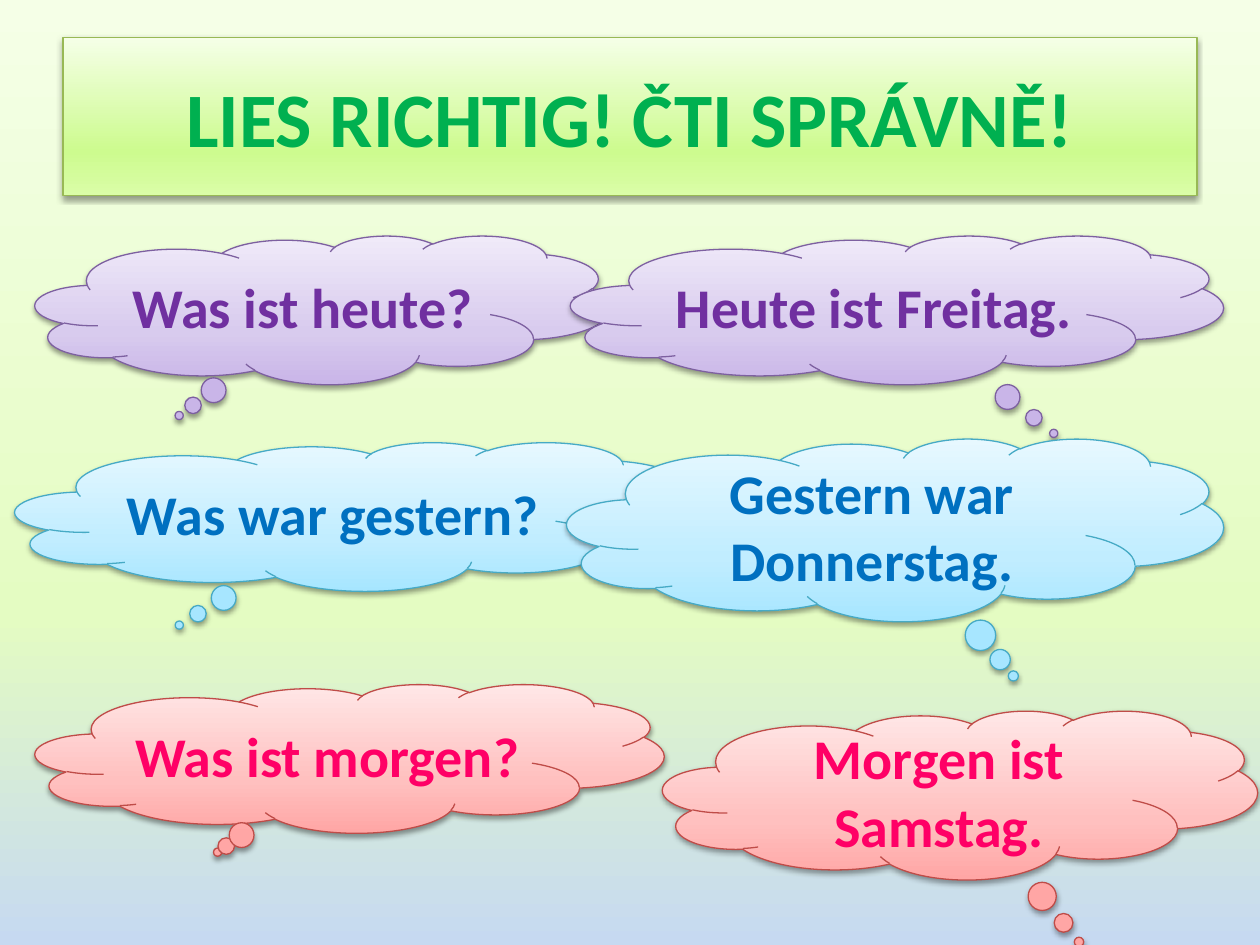
import dataclasses

import lxml.etree
import pptx
import pptx.dml.color
import pptx.enum.shapes
import pptx.enum.text
import pptx.oxml.ns
import pptx.util

Inches = pptx.util.Inches
Shapes = pptx.enum.shapes.MSO_SHAPE


@dataclasses.dataclass(frozen=True)
class Palette:
    gradient: tuple
    line: str
    text: str


@dataclasses.dataclass(frozen=True)
class Theme:
    font: str = "Calibri"
    title_size: int = 44
    cloud_size: int = 32
    line_width: float = 0.75
    background: tuple = ((0, "C6D9F1"), (35, "E4FCC2"), (100, "F5FFE7"))
    title: Palette = Palette(
        ((0, "DAFDA7"), (28, "CDFB8F"), (100, "F5FFE7")), "98B955", "00B050")
    today: Palette = Palette(
        ((0, "C9B5E8"), (35, "D8CBEE"), (100, "F0EAF9")), "7D60A0", "7030A0")
    yesterday: Palette = Palette(
        ((0, "A7E6FF"), (35, "C1EDFF"), (100, "E7F8FF")), "46AAC5", "0070C0")
    tomorrow: Palette = Palette(
        ((0, "FFA6A5"), (35, "FFC0BF"), (100, "FFE7E7")), "BF4C48", "FF0066")


def add_element(parent, tag, **attributes):
    element = lxml.etree.SubElement(parent, pptx.oxml.ns.qn(tag))
    for name, value in attributes.items():
        element.set(name, str(value))
    return element


def fill_upwards(fill, owner, stops):
    """Give the fill a gradient whose first stop lies at the bottom."""
    fill.gradient()
    fill.gradient_angle = 90
    stop_list = owner.find(".//" + pptx.oxml.ns.qn("a:gsLst"))
    for stop in list(stop_list):
        stop_list.remove(stop)
    for percent, color in stops:
        stop = add_element(stop_list, "a:gs", pos=percent * 1000)
        add_element(stop, "a:srgbClr", val=color)


def add_soft_shadow(shape):
    shape.shadow.inherit = False
    effects = shape._element.spPr.find(pptx.oxml.ns.qn("a:effectLst"))
    shadow = add_element(effects, "a:outerShdw", blurRad=pptx.util.Pt(3.1),
                         dist=pptx.util.Pt(1.6), dir=90 * 60000, rotWithShape=0)
    color = add_element(shadow, "a:srgbClr", val="000000")
    add_element(color, "a:alpha", val=38000)


def write_text(shape, text, *, font, size, color, bold=True):
    frame = shape.text_frame
    frame.word_wrap = True
    frame.vertical_anchor = pptx.enum.text.MSO_ANCHOR.MIDDLE
    paragraph = frame.paragraphs[0]
    paragraph.alignment = pptx.enum.text.PP_ALIGN.CENTER
    run = paragraph.add_run()
    run.text = text
    run.font.name = font
    run.font.size = pptx.util.Pt(size)
    run.font.bold = bold
    run.font.color.rgb = pptx.dml.color.RGBColor.from_string(color)


class SlideBuilder:
    def __init__(self, slide, theme):
        self.slide = slide
        self.theme = theme

    def background(self):
        fill_upwards(self.slide.background.fill, self.slide._element,
                     self.theme.background)

    def panel(self, kind, box, text, palette, size):
        shape = self.slide.shapes.add_shape(kind, *map(Inches, box))
        fill_upwards(shape.fill, shape._element, palette.gradient)
        shape.line.color.rgb = pptx.dml.color.RGBColor.from_string(palette.line)
        shape.line.width = pptx.util.Pt(self.theme.line_width)
        add_soft_shadow(shape)
        write_text(shape, text, font=self.theme.font, size=size,
                   color=palette.text)
        return shape

    def title(self, box, text):
        self.panel(Shapes.RECTANGLE, box, text, self.theme.title,
                   self.theme.title_size)

    def cloud(self, box, tail, text, palette):
        """Tail is the tip's offset from the centre, in parts of the size."""
        shape = self.panel(Shapes.CLOUD_CALLOUT, box, text, palette,
                           self.theme.cloud_size)
        shape.adjustments[0], shape.adjustments[1] = tail


def main():
    presentation = pptx.Presentation()
    presentation.slide_width = Inches(10)
    presentation.slide_height = Inches(7.5)
    theme = Theme()
    slide = presentation.slides.add_slide(presentation.slide_layouts[6])
    builder = SlideBuilder(slide, theme)

    builder.background()
    builder.title((0.5, 0.3, 9, 1.25), "LIES RICHTIG! ČTI SPRÁVNĚ!")
    clouds = [
        ((0.28, 1.87, 4.57, 1.18), (-0.25, 0.71), "Was ist heute?", theme.today),
        ((4.53, 1.87, 5.18, 1.18), (0.24, 0.83), "Heute ist Freitag.", theme.today),
        ((0.12, 3.51, 5.43, 1.18), (-0.26, 0.73), "Was war gestern?",
         theme.yesterday),
        ((4.5, 3.48, 5.21, 1.45), (0.18, 0.8), "Gestern war Donnerstag.",
         theme.yesterday),
        ((0.28, 5.43, 4.99, 1.18), (-0.21, 0.63), "Was ist morgen?",
         theme.tomorrow),
        ((5.26, 5.64, 4.72, 1.34), (0.2, 0.87), "Morgen ist Samstag.",
         theme.tomorrow),
    ]
    for cloud in clouds:
        builder.cloud(*cloud)
    presentation.save("out.pptx")


if __name__ == "__main__":
    main()
